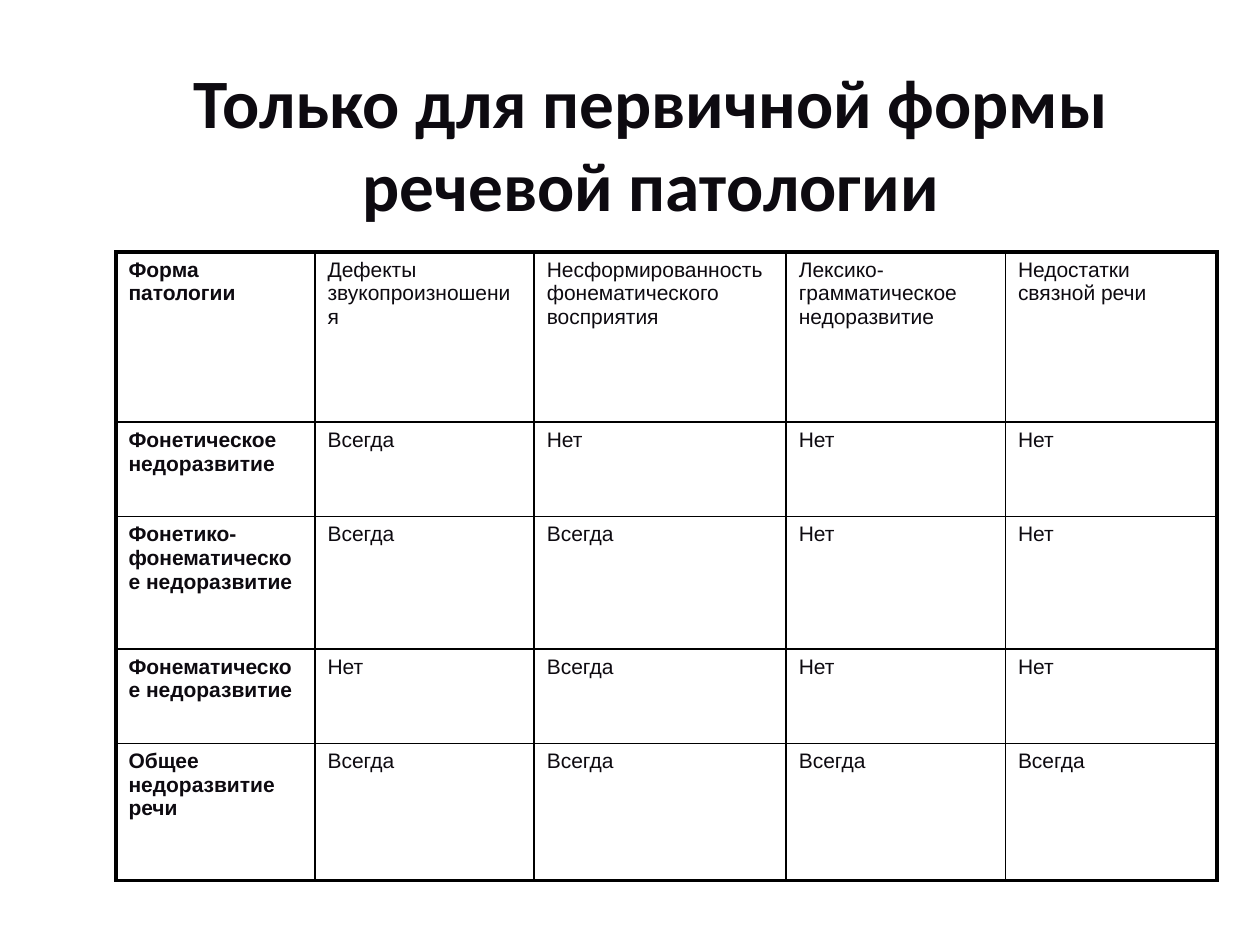
from lxml import etree
from pptx import Presentation
from pptx import util as u
from pptx.dml.color import RGBColor
from pptx.enum import text
from pptx.oxml import ns

INK = RGBColor(0x0D, 0x0A, 0x10)
LINE = RGBColor(0, 0, 0)

TITLE = "Только для первичной формы речевой патологии"
ROWS = [
    ["Форма патологии", "Дефекты звукопроизношения",
     "Несформированность фонематического восприятия",
     "Лексико-грамматическое недоразвитие", "Недостатки связной речи"],
    ["Фонетическое недоразвитие", "Всегда", "Нет", "Нет", "Нет"],
    ["Фонетико-фонематическое недоразвитие", "Всегда", "Всегда", "Нет", "Нет"],
    ["Фонематическое недоразвитие", "Нет", "Всегда", "Нет", "Нет"],
    ["Общее недоразвитие речи", "Всегда", "Всегда", "Всегда", "Всегда"],
]
WIDTHS = [1.58, 1.74, 2, 1.74, 1.68]
HEIGHTS = [1.35, 0.75, 1.05, 0.75, 1.09]


class Deck:
    """Holds the text style and the current slide, and draws its elements."""

    def __init__(self, slide, ink, line):
        self.slide, self.ink, self.line = slide, ink, line

    def style(self, para, face, size, bold):
        for run in para.runs:
            font = run.font
            font.name, font.size, font.bold = face, u.Pt(size), bold
            font.color.rgb = self.ink

    def title(self, words, left, top, width, height):
        box = self.slide.shapes.add_textbox(
            *map(u.Inches, (left, top, width, height)))
        frame = box.text_frame
        frame.word_wrap = True
        frame.vertical_anchor = text.MSO_ANCHOR.BOTTOM
        frame.margin_bottom = u.Inches(0.29)
        frame.text = words
        para = frame.paragraphs[0]
        para.alignment = text.PP_ALIGN.CENTER
        self.style(para, "Calibri", 39.6, True)

    def edge(self, cell, side, width):
        props = cell._tc.get_or_add_tcPr()
        line = etree.SubElement(props, ns.qn("a:ln" + side), w=str(u.Pt(width)))
        fill = etree.SubElement(line, ns.qn("a:solidFill"))
        etree.SubElement(fill, ns.qn("a:srgbClr"), val=str(self.line))

    def cell(self, cell, words, bold, outer):
        cell.text = words
        para = cell.text_frame.paragraphs[0]
        para.space_before = u.Pt(2.4)
        self.style(para, "Arial", 12, bold)
        for side in "LRTB":
            self.edge(cell, side, 2.25 if side in outer else 1)
        cell.fill.background()

    def table(self, rows, left, top, widths, heights):
        size = (left, top, sum(widths), sum(heights))
        grid = self.slide.shapes.add_table(
            len(rows), len(widths), *map(u.Inches, size)).table
        grid.first_row = grid.horz_banding = False
        for col, width in zip(grid.columns, widths):
            col.width = u.Inches(width)
        for row, height in zip(grid.rows, heights):
            row.height = u.Inches(height)
        for r, row in enumerate(rows):
            for c, words in enumerate(row):
                ends = {"L": c == 0, "R": c == len(row) - 1,
                        "T": r == 0, "B": r == len(rows) - 1}
                outer = [side for side, end in ends.items() if end]
                self.cell(grid.cell(r, c), words, c == 0, outer)


def main():
    show = Presentation()
    show.slide_width, show.slide_height = u.Inches(10), u.Inches(7.5)
    deck = Deck(show.slides.add_slide(show.slide_layouts[6]), INK, LINE)
    deck.title(TITLE, 0.83, 0.83, 8.67, 1.25)
    deck.table(ROWS, 0.92, 2, WIDTHS, HEIGHTS)
    show.save("out.pptx")


if __name__ == "__main__":
    main()
